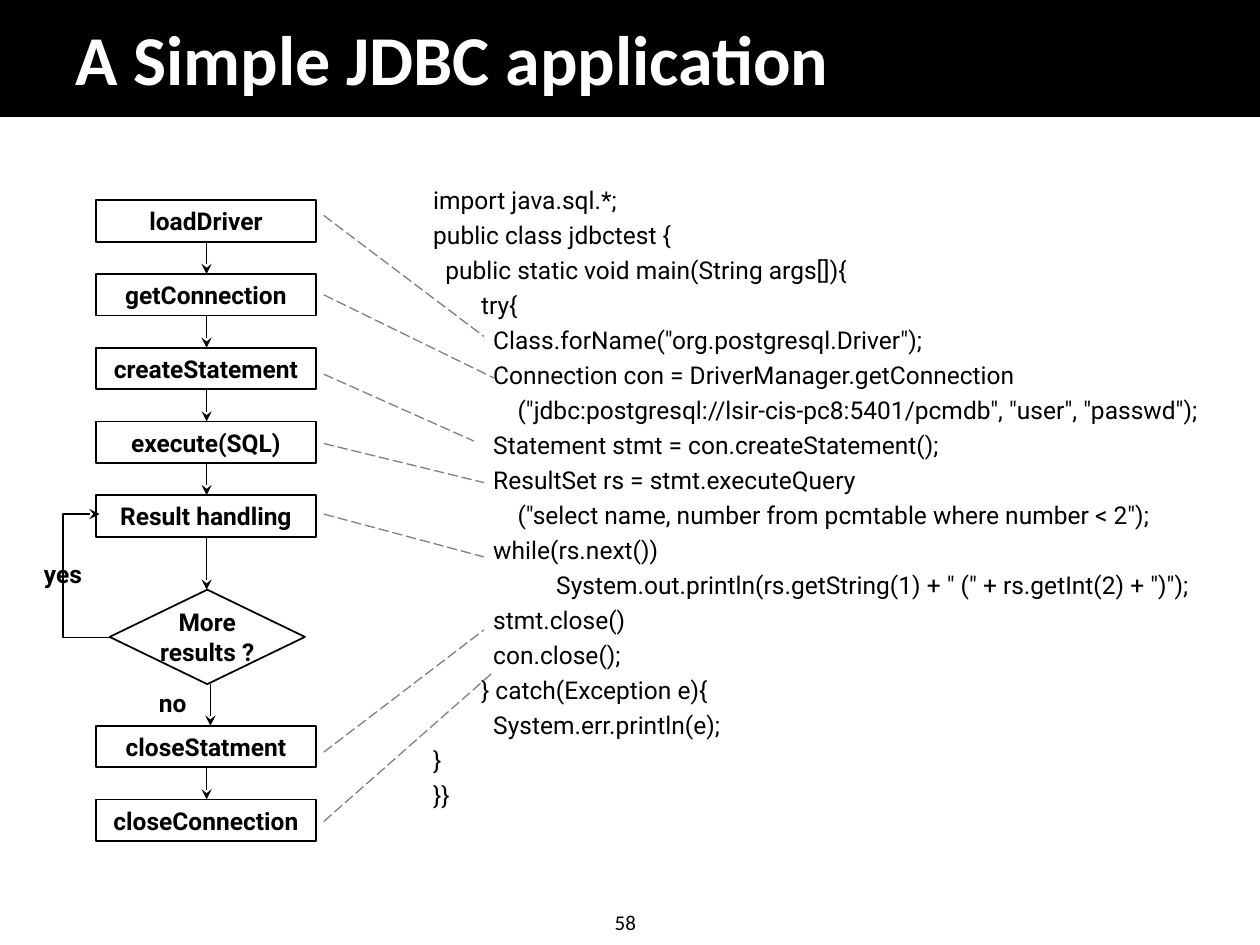
from dataclasses import dataclass
from typing import NamedTuple

from lxml import etree
from pptx import Presentation
from pptx.dml.color import RGBColor
from pptx.enum.dml import MSO_LINE
from pptx.enum.shapes import MSO_CONNECTOR, MSO_SHAPE
from pptx.enum.text import MSO_ANCHOR, MSO_AUTO_SIZE, PP_ALIGN
from pptx.oxml.ns import qn
from pptx.util import Inches, Length, Pt

RECTANGLE = MSO_SHAPE.RECTANGLE
DIAMOND = MSO_SHAPE.DIAMOND
STRAIGHT = MSO_CONNECTOR.STRAIGHT
LONG_DASH = MSO_LINE.LONG_DASH
LEFT = PP_ALIGN.LEFT
CENTER = PP_ALIGN.CENTER
MIDDLE = MSO_ANCHOR.MIDDLE
BOTTOM = MSO_ANCHOR.BOTTOM
NO_AUTOFIT = MSO_AUTO_SIZE.NONE
TITLE_ONLY = 5


@dataclass(frozen=True)
class Theme:
    black: RGBColor = RGBColor(0, 0, 0)
    white: RGBColor = RGBColor(255, 255, 255)
    gray: RGBColor = RGBColor(128, 128, 128)
    heading_font: str = "Calibri"
    body_font: str = "Roboto"
    title_size: Length = Pt(40)
    body_size: Length = Pt(14)
    number_size: Length = Pt(12)
    outline: Length = Pt(1)
    link_width: Length = Pt(0.75)
    code_gap: Length = Pt(3.2)


class Box(NamedTuple):
    left: float
    top: float
    width: float
    height: float

    def inches(self) -> list[Length]:
        return [Inches(value) for value in self]


class Step(NamedTuple):
    text: str
    top: float


class Line(NamedTuple):
    start_x: float
    start_y: float
    end_x: float
    end_y: float


THEME = Theme()
STEP_LEFT, STEP_WIDTH, STEP_HEIGHT = 0.76, 1.75, 0.33
STEP_PITCH = 0.585
FIRST_TOP, CLOSING_TOP = 1.59, 5.76
AXIS = 1.64
DECISION = Box(0.87, 4.68, 1.55, 0.75)
CODE_INDENT = 0.38
LINK_LEFT = 2.57

STEPS = [
    Step(text, first + index * STEP_PITCH)
    for first, names in (
        (FIRST_TOP, ("loadDriver", "getConnection", "createStatement", "execute(SQL)", "Result handling")),
        (CLOSING_TOP, ("closeStatment", "closeConnection")),
    )
    for index, text in enumerate(names)
]
RESULT_STEP = 4
LOOP = [(0.89, 5.06), (0.5, 5.06), (0.5, 4.08), (0.79, 4.08)]
LINKS = [
    Line(LINK_LEFT, 1.71, 3.84, 2.67),
    Line(LINK_LEFT, 2.34, 3.92, 3),
    Line(LINK_LEFT, 2.97, 3.76, 3.5),
    Line(LINK_LEFT, 3.52, 3.84, 3.83),
    Line(LINK_LEFT, 4.08, 3.84, 4.42),
    Line(LINK_LEFT, 5.97, 3.84, 5),
    Line(LINK_LEFT, 6.52, 3.92, 5.33),
]
CODE = [
    "import java.sql.*;",
    "public class jdbctest {",
    "  public static void main(String args[]){",
    "\ttry{",
    "\t  Class.forName(\"org.postgresql.Driver\");",
    "\t  Connection con = DriverManager.getConnection",
    "\t      (\"jdbc:postgresql://lsir-cis-pc8:5401/pcmdb\", \"user\", \"passwd\");",
    "\t  Statement stmt = con.createStatement();",
    "\t  ResultSet rs = stmt.executeQuery",
    "\t      (\"select name, number from pcmtable where number < 2\");",
    "\t  while(rs.next())",
    "\t\t  System.out.println(rs.getString(1) + \" (\" + rs.getInt(2) + \")\");",
    "\t  stmt.close()",
    "\t  con.close();",
    "\t} catch(Exception e){",
    "\t  System.err.println(e);",
    "}",
    "}}",
]


def write_text(frame, lines, font=THEME.body_font, size=THEME.body_size,
               color=THEME.black, bold=False, alignment=LEFT) -> None:
    for index, line in enumerate(lines):
        paragraph = frame.add_paragraph() if index else frame.paragraphs[0]
        paragraph.alignment = alignment
        run = paragraph.add_run()
        run.text = line
        run.font.name = font
        run.font.size = size
        run.font.bold = bold
        run.font.color.rgb = color


def add_text(slide, box: Box, lines, wrap: bool = True, **style):
    frame = slide.shapes.add_textbox(*box.inches()).text_frame
    frame.word_wrap = wrap
    write_text(frame, lines, **style)
    return frame


def outline_shape(shape) -> None:
    shape.shadow.inherit = False
    shape.fill.background()
    shape.line.color.rgb = THEME.black
    shape.line.width = THEME.outline


def add_node(slide, kind, box: Box, lines) -> None:
    shape = slide.shapes.add_shape(kind, *box.inches())
    outline_shape(shape)
    shape.text_frame.word_wrap = False
    shape.text_frame.vertical_anchor = MIDDLE
    write_text(shape.text_frame, lines, bold=True, alignment=CENTER)


def add_arrowhead(shape) -> None:
    etree.SubElement(shape.line._get_or_add_ln(), qn("a:tailEnd"), type="stealth")


def add_line(slide, line: Line, color: RGBColor, width: Length):
    connector = slide.shapes.add_connector(STRAIGHT, *(Inches(value) for value in line))
    connector.line.color.rgb = color
    connector.line.width = width
    etree.SubElement(connector.element.spPr, qn("a:effectLst"))
    return connector


def add_arrow(slide, x: float, top: float, bottom: float) -> None:
    add_arrowhead(add_line(slide, Line(x, top, x, bottom), THEME.black, THEME.outline))


def add_header(slide) -> None:
    title = slide.shapes.title
    header = slide.shapes.add_shape(RECTANGLE, *Box(0, 0, 10, 0.92).inches())
    outline_shape(header)
    header.fill.solid()
    header.fill.fore_color.rgb = THEME.black
    title.element.addprevious(header.element)
    title.left, title.top, title.width, title.height = Box(0.5, 0.21, 8.5, 0.63).inches()
    title.text_frame.auto_size = NO_AUTOFIT
    title.text_frame.vertical_anchor = BOTTOM
    write_text(title.text_frame, ["A Simple JDBC application"], font=THEME.heading_font,
               size=THEME.title_size, color=THEME.white, bold=True)


def add_flowchart(slide) -> None:
    for step in STEPS:
        add_node(slide, RECTANGLE, Box(STEP_LEFT, step.top, STEP_WIDTH, STEP_HEIGHT), [step.text])
    add_node(slide, DIAMOND, DECISION, ["More", "results ?"])
    for index, (upper, lower) in enumerate(zip(STEPS, STEPS[1:])):
        target = DECISION.top if index == RESULT_STEP else lower.top
        add_arrow(slide, AXIS, upper.top + STEP_HEIGHT, target)
    add_arrow(slide, 1.67, DECISION.top + DECISION.height, CLOSING_TOP)

    points = [(Inches(x), Inches(y)) for x, y in LOOP]
    builder = slide.shapes.build_freeform(*points[0])
    builder.add_line_segments(points[1:], close=False)
    loop = builder.convert_to_shape()
    outline_shape(loop)
    add_arrowhead(loop)
    for label, box in (("no", Box(1.08, 5.41, 0.58, 0.34)), ("yes", Box(0.08, 4.39, 0.84, 0.34))):
        add_text(slide, box, [label], bold=True, alignment=CENTER)


def add_code(slide) -> None:
    frame = add_text(slide, Box(3.34, 1.42, 7.33, 5), CODE)
    for index, paragraph in enumerate(frame.paragraphs):
        properties = paragraph._p.get_or_add_pPr()
        properties.set("marL", str(Inches(CODE_INDENT)))
        properties.set("indent", str(-Inches(CODE_INDENT)))
        if index:
            paragraph.space_before = THEME.code_gap


def main() -> None:
    presentation = Presentation()
    presentation.slide_width, presentation.slide_height = Inches(10), Inches(7.5)
    slide = presentation.slides.add_slide(presentation.slide_layouts[TITLE_ONLY])
    add_header(slide)
    add_text(slide, Box(4.78, 7.17, 0.41, 0.3), ["58"], wrap=False,
             font=THEME.heading_font, size=THEME.number_size)
    add_flowchart(slide)
    add_code(slide)
    for link in LINKS:
        add_line(slide, link, THEME.gray, THEME.link_width).line.dash_style = LONG_DASH
    presentation.save("out.pptx")


if __name__ == "__main__":
    main()
